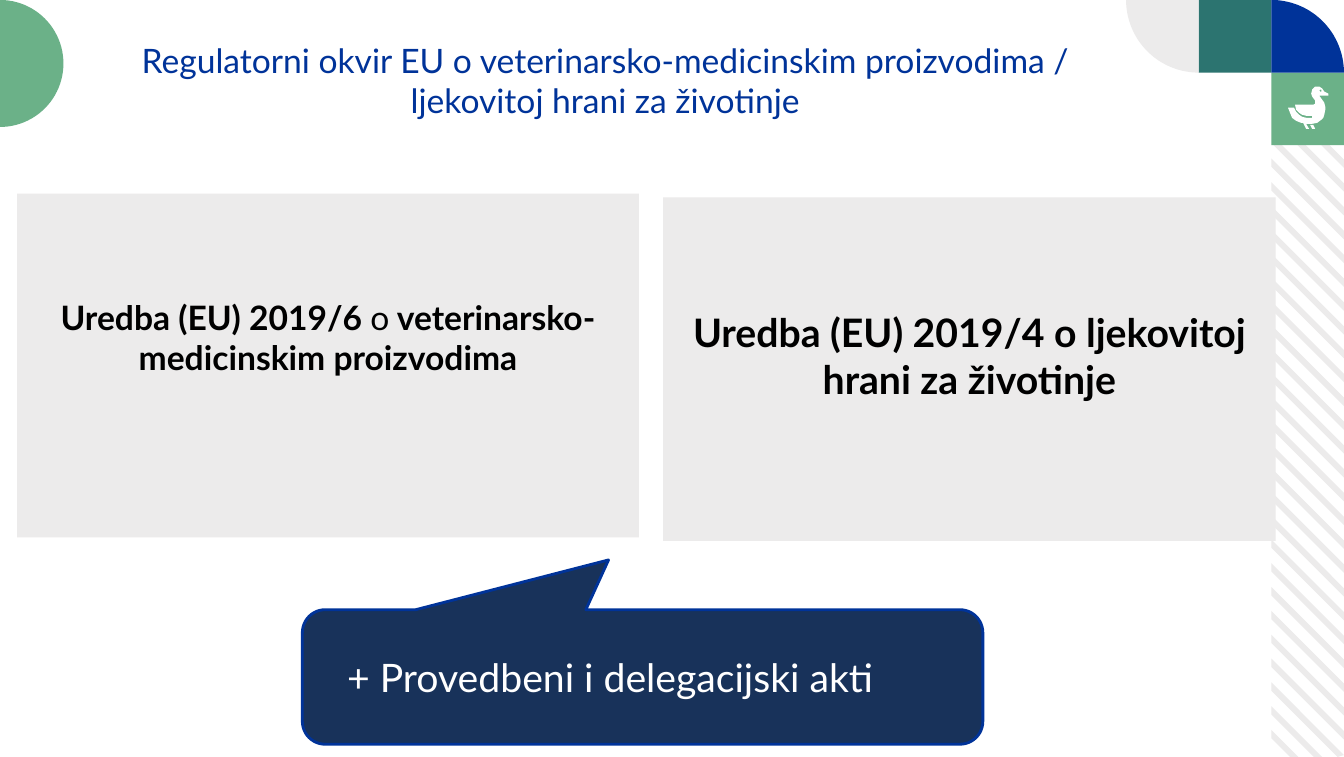
import math
import pptx
import pptx.util
import pptx.dml.color
import pptx.enum.shapes
import pptx.enum.text

Cm = pptx.util.Cm
KIND = pptx.enum.shapes.MSO_SHAPE
ALIGN = pptx.enum.text.PP_ALIGN
ANCHOR = pptx.enum.text.MSO_ANCHOR

WIDE, HIGH = 33.87, 19.07
TILE = 1.83
BLUE, NAVY, GREEN, TEAL = "003399", "18325A", "6BB188", "2C7470"
GREY, WHITE, BLACK = "ECEBEB", "FFFFFF", "000000"

# Duck outline in hundredths of an inch: foot, body, eye
DUCK = [
    [(27, 42), (25, 38), (22, 38), (24, 42)],
    [(40, 7), (36, 5), (34, 2), (31, 0), (27, 0), (24, 3), (23, 7), (24, 10),
     (27, 14), (27, 17), (25, 18), (7, 18), (8, 23), (11, 26), (14, 28),
     (18, 29), (24, 29), (24, 31), (18, 31), (14, 30), (11, 28), (8, 25),
     (6, 21), (0, 21), (2, 26), (4, 31), (8, 34), (13, 36), (15, 36),
     (18, 42), (21, 42), (18, 37), (24, 37), (29, 36), (33, 33), (35, 31),
     (36, 28), (37, 23), (37, 20), (36, 16), (31, 9), (40, 9)],
    [(31, 4), (32, 3), (33, 3), (33, 5), (32, 5)],
]


def color(text):
    return pptx.dml.color.RGBColor.from_string(text)


def write(para, text, size=24, ink=BLACK, bold=False, align=ALIGN.CENTER):
    para.alignment = align
    run = para.add_run()
    run.text = text
    run.font.name = "Lato"
    run.font.size = pptx.util.Pt(size)
    run.font.bold = bold
    run.font.color.rgb = color(ink)


class Deck:
    def __init__(self):
        self.file = pptx.Presentation()
        self.file.slide_width, self.file.slide_height = Cm(WIDE), Cm(HIGH)
        self.slide = self.file.slides.add_slide(self.file.slide_layouts[5])
        self.shapes = self.slide.shapes

    def paint(self, shape, fill, line=None):
        shape.shadow.inherit = False
        shape.fill.solid()
        shape.fill.fore_color.rgb = color(fill)
        if line:
            shape.line.color.rgb = color(line)
            shape.line.width = pptx.util.Pt(2)
        else:
            shape.line.fill.background()
        return shape

    def title(self, text, *place):
        box = self.shapes.title
        box.left, box.top, box.width, box.height = map(Cm, place)
        frame = box.text_frame
        frame.word_wrap = True
        frame.auto_size = pptx.enum.text.MSO_AUTO_SIZE.NONE
        frame.vertical_anchor = ANCHOR.TOP
        write(frame.paragraphs[0], text, ink=BLUE)

    def block(self, kind, fill, *place, line=None):
        return self.paint(self.shapes.add_shape(kind, *map(Cm, place)), fill, line)

    def panel(self, runs, size, inset, *place):
        frame = self.block(KIND.RECTANGLE, GREY, *place).text_frame
        frame.word_wrap = True
        frame.vertical_anchor = ANCHOR.MIDDLE
        frame.margin_bottom = Cm(inset)
        for text, bold in runs:
            write(frame.paragraphs[0], text, size=size, bold=bold)

    def label(self, text, *place, **style):
        frame = self.shapes.add_textbox(*map(Cm, place)).text_frame
        frame.word_wrap = True
        write(frame.paragraphs[0], text, **style)

    def outline(self, rings, fill):
        rings = [[(Cm(x), Cm(y)) for x, y in ring] for ring in rings]
        pen = self.shapes.build_freeform(*rings[0][0], scale=1.0)
        for ring in rings:
            if ring is not rings[0]:
                pen.move_to(*ring[0])
            pen.add_line_segments(ring[1:], close=True)
        self.paint(pen.convert_to_shape(), fill)

    def sector(self, x, y, size, start, sweep, fill):
        turns = [math.radians(start + sweep * i / 48) for i in range(49)]
        arc = [(x + size * math.cos(t), y + size * math.sin(t)) for t in turns]
        self.outline([[(x, y)] + arc], fill)

    def stripes(self, left, top, gap, thick, first, count):
        def edge(base):
            near = max(0, top - base)
            far = min(WIDE - left, HIGH - base)
            return [(left + d, base + d) for d in (near, far)]

        bases = [first + gap * i for i in range(count)]
        self.outline([edge(b) + edge(b + thick)[::-1] for b in bases], GREY)


def main():
    deck = Deck()
    right = WIDE - TILE

    # Side band and corner tiles
    deck.stripes(right, 2 * TILE, 0.6, 0.21, 2.19, 28)
    deck.block(KIND.RECTANGLE, TEAL, right - TILE, 0, TILE, TILE)
    deck.block(KIND.RECTANGLE, GREEN, right, TILE, TILE, TILE)
    deck.sector(right, TILE, TILE, 270, 90, BLUE)
    deck.sector(right - TILE, 0, TILE, 90, 90, GREY)
    unit = 0.0254
    deck.outline([[(32.46 + x * unit, 2.18 + y * unit) for x, y in ring]
                  for ring in DUCK], WHITE)
    deck.sector(0, 1.6, 1.6, -90, 180, GREEN)

    # Title
    deck.title("Regulatorni okvir EU o veterinarsko-medicinskim proizvodima / "
               "ljekovitoj hrani za životinje", 2.1, 0.87, 26.3, 2.3)

    # Two regulations
    deck.panel([("Uredba (EU) 2019/6 ", True), ("o", False),
                (" veterinarsko-medicinskim proizvodima", True)],
               24, 1.57, 0.43, 4.88, 15.67, 8.66)
    deck.panel([("Uredba (EU) 2019/4 o ljekovitoj hrani za životinje", True)],
               28, 0.83, 16.71, 4.97, 15.44, 8.66)

    # Callout
    call = deck.block(KIND.ROUNDED_RECTANGULAR_CALLOUT, NAVY,
                      7.62, 15.36, 17.15, 3.39, line=BLUE)
    for i, value in enumerate((-0.05, -0.87, 0.17)):
        call.adjustments[i] = value
    deck.label("+ Provedbeni i delegacijski akti", 8.5, 16.33, 15.35, 1.45,
               size=28, ink=WHITE, align=ALIGN.LEFT)

    deck.file.save("out.pptx")


if __name__ == "__main__":
    main()
